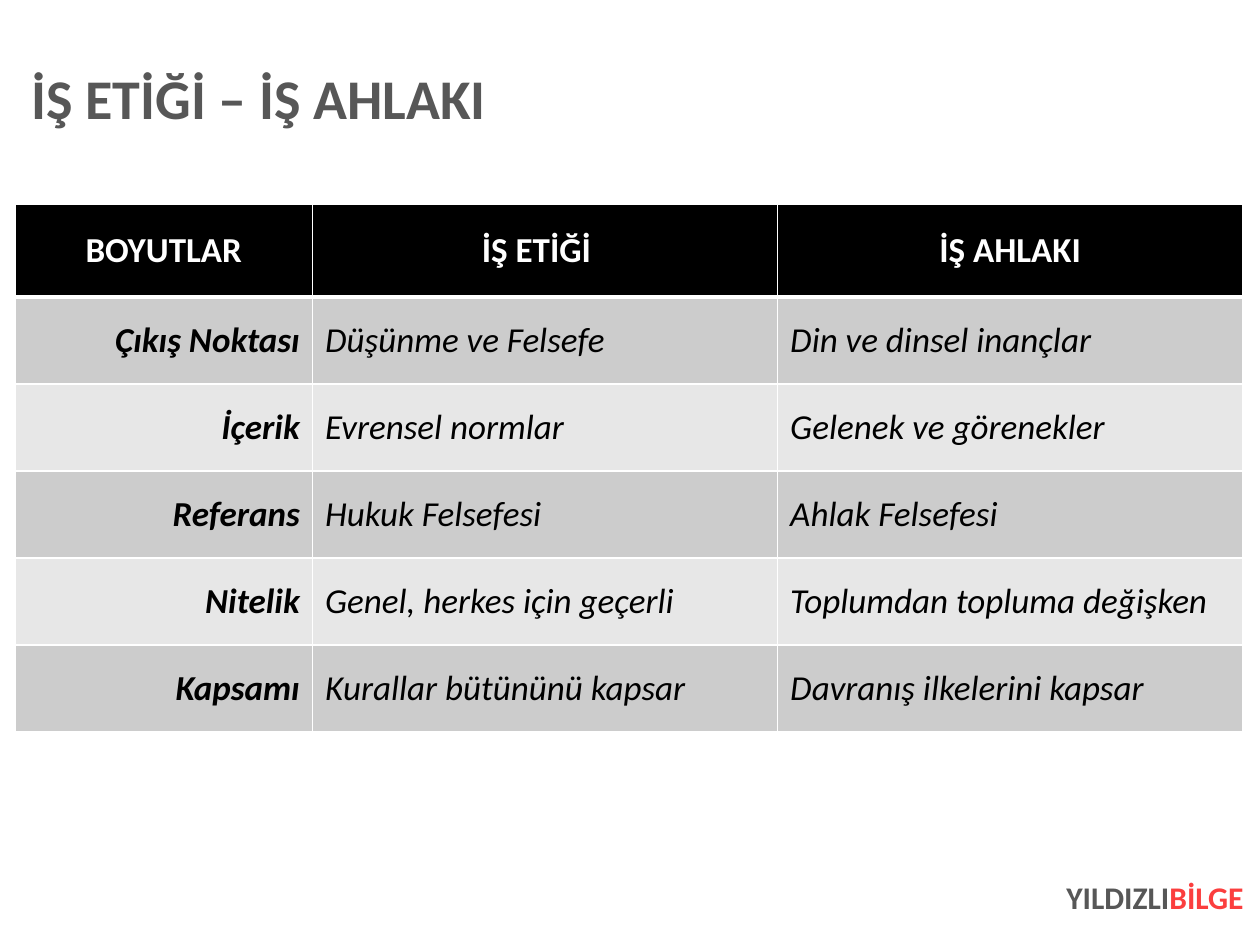
from lxml import etree
from pptx import Presentation
from pptx.dml.color import RGBColor
from pptx.enum import text
from pptx.oxml.ns import qn
from pptx.util import Pt


def rgb(value):
    return RGBColor.from_string(value)


def add_borders(cell, widths):
    """Draw white cell edges; widths maps lnL, lnR, lnT, lnB to points."""
    properties = cell._tc.get_or_add_tcPr()
    for position, (edge, width) in enumerate(widths.items()):
        line = etree.Element(qn(f"a:{edge}"), w=str(Pt(width)))
        fill = etree.SubElement(line, qn("a:solidFill"))
        etree.SubElement(fill, qn("a:srgbClr"), val="FFFFFF")
        properties.insert(position, line)


prs = Presentation()
prs.slide_width, prs.slide_height = Pt(720), Pt(540)
slide = prs.slides.add_slide(prs.slide_layouts[5])

# Heading
heading = slide.shapes.title
heading.left, heading.top, heading.width, heading.height = Pt(18), Pt(32.4), Pt(694), Pt(51)
heading_frame = heading.text_frame
heading_frame.text = "İŞ ETİĞİ – İŞ AHLAKI"
heading_frame.auto_size = text.MSO_AUTO_SIZE.NONE
heading_frame.vertical_anchor = text.MSO_ANCHOR.MIDDLE
heading_frame.margin_left = heading_frame.margin_right = 0
heading_line = heading_frame.paragraphs[0]
heading_line.alignment = text.PP_ALIGN.LEFT
heading_line.line_spacing = 0.9
heading_font = heading_line.runs[0].font
for name, value in {"name": "Calibri", "size": Pt(32), "bold": True}.items():
    setattr(heading_font, name, value)
heading_font.color.rgb = rgb("575757")

# Comparison of the two concepts
comparison = [
    ("BOYUTLAR", "İŞ ETİĞİ", "İŞ AHLAKI"),
    ("Çıkış Noktası", "Düşünme ve Felsefe", "Din ve dinsel inançlar"),
    ("İçerik", "Evrensel normlar", "Gelenek ve görenekler"),
    ("Referans", "Hukuk Felsefesi", "Ahlak Felsefesi"),
    ("Nitelik", "Genel, herkes için geçerli", "Toplumdan topluma değişken"),
    ("Kapsamı", "Kurallar bütününü kapsar", "Davranış ilkelerini kapsar"),
]
table = slide.shapes.add_table(
    len(comparison), 3, Pt(8.6), Pt(116.6), Pt(701.6), Pt(301.7)).table
for column, width in zip(table.columns, (170, 265.8, 265.8)):
    column.width = Pt(width)
for r, entries in enumerate(comparison):
    is_header = r == 0
    table.rows[r].height = Pt(53.2 if is_header else 49.7)
    for c, entry in enumerate(entries):
        cell = table.cell(r, c)
        cell.text = entry
        cell.vertical_anchor = text.MSO_ANCHOR.MIDDLE
        cell.fill.solid()
        cell.fill.fore_color.rgb = rgb(
            "000000" if is_header else "CCCCCC" if r % 2 else "E7E7E7")
        add_borders(cell, {"lnL": 1, "lnR": 1, "lnT": 3 if r == 1 else 1,
                           "lnB": 3 if is_header else 1})
        paragraph = cell.text_frame.paragraphs[0]
        paragraph.alignment = (text.PP_ALIGN.CENTER if is_header
                               else text.PP_ALIGN.RIGHT if c == 0
                               else text.PP_ALIGN.LEFT)
        font = paragraph.runs[0].font
        formats = {"name": "Calibri", "size": Pt(20),
                   "bold": is_header or c == 0, "italic": not is_header}
        for name, value in formats.items():
            setattr(font, name, value)
        font.color.rgb = rgb("FFFFFF" if is_header else "000000")
table.cell(0, 1).margin_right = Pt(17)

# Organisation name
signature = slide.shapes.add_textbox(Pt(544.3), Pt(502), Pt(166.3), Pt(40)).text_frame
signature.word_wrap = True
for side in ("left", "top", "right", "bottom"):
    setattr(signature, f"margin_{side}", 0)
signature_line = signature.paragraphs[0]
signature_line.alignment = text.PP_ALIGN.RIGHT
for part, color in (("YILDIZLI", "575757"), ("BİLGE", "FB3E3E")):
    run = signature_line.add_run()
    run.text = part
    for name, value in {"name": "Calibri", "size": Pt(18), "bold": True}.items():
        setattr(run.font, name, value)
    run.font.color.rgb = rgb(color)

prs.save("out.pptx")
